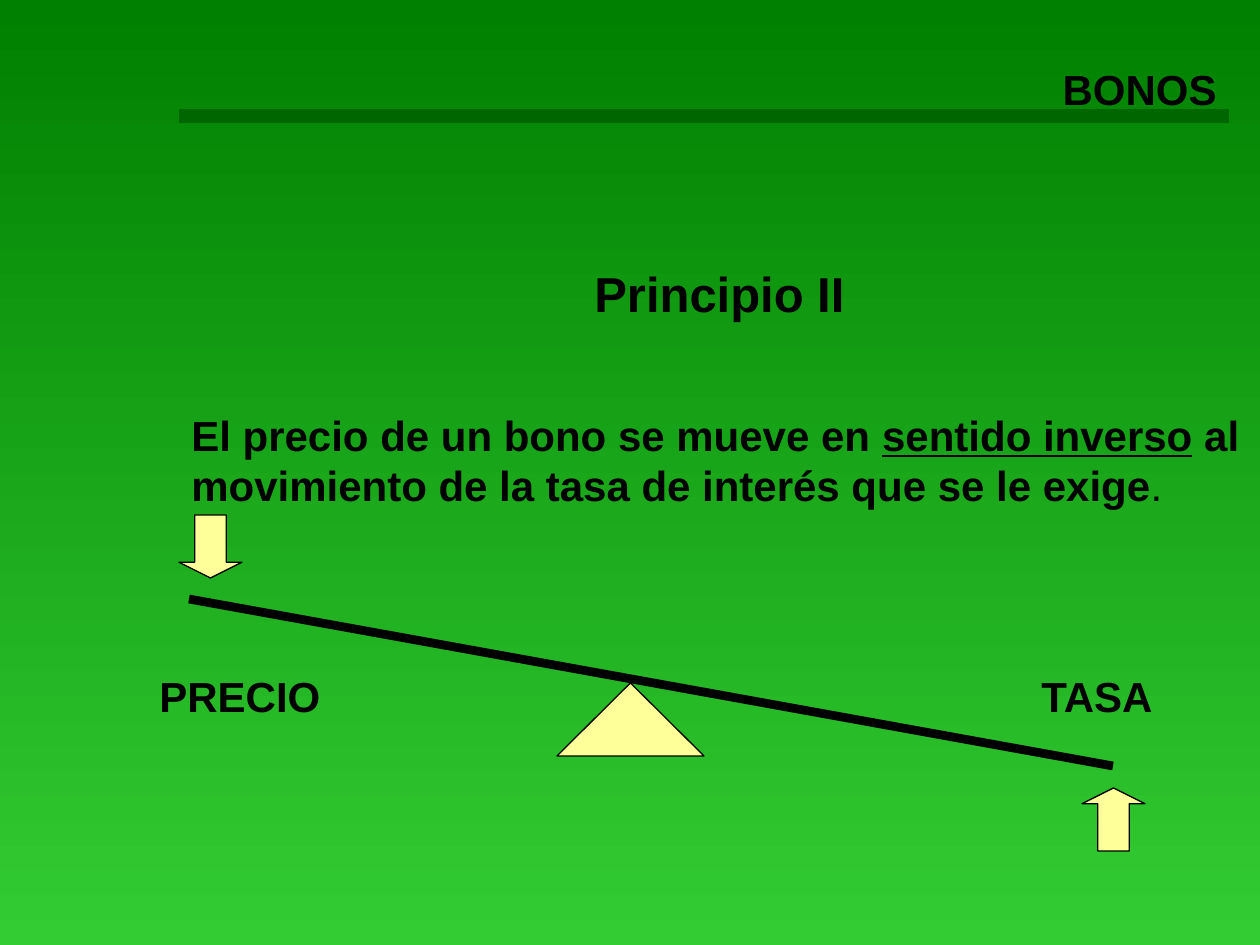
import pptx
import pptx.dml.color
import pptx.enum.shapes
import pptx.enum.text
import pptx.oxml.ns
import pptx.util
from lxml import etree

EMU_PER_PX = 914400 / 126
COLORS = {
    "sky": "008000",
    "ground": "33CC33",
    "rule": "006600",
    "ink": "000000",
    "cream": "FFFF99",
}
SHAPES = pptx.enum.shapes.MSO_SHAPE
ALIGN = pptx.enum.text.PP_ALIGN


def px(*lengths):
    return [pptx.util.Emu(round(length * EMU_PER_PX)) for length in lengths]


def rgb(name):
    return pptx.dml.color.RGBColor.from_string(COLORS[name])


def paint_background(slide):
    fill = slide.background.fill
    fill.gradient()
    fill.gradient_angle = 270
    for stop, name in zip(fill.gradient_stops, ("sky", "ground")):
        stop.color.rgb = rgb(name)


def add_line(slide, start, end, color, width):
    line = slide.shapes.add_connector(
        pptx.enum.shapes.MSO_CONNECTOR.STRAIGHT, *px(*start, *end))
    line.line.color.rgb = rgb(color)
    line.line.width = pptx.util.Pt(width)
    etree.SubElement(line._element.spPr, pptx.oxml.ns.qn("a:effectLst"))


def add_figure(slide, preset, *box):
    figure = slide.shapes.add_shape(preset, *px(*box))
    figure.shadow.inherit = False
    figure.fill.solid()
    figure.fill.fore_color.rgb = rgb("cream")
    figure.line.color.rgb = rgb("ink")
    figure.line.width = pptx.util.Pt(0.75)
    return figure


def add_frame(slide, *box):
    frame = slide.shapes.add_textbox(*px(*box)).text_frame
    frame.word_wrap = True
    return frame


def add_run(paragraph, text, size=24, bold=True, underline=False):
    run = paragraph.add_run()
    run.text = text
    font = run.font
    font.name = "Arial"
    font.size = pptx.util.Pt(size)
    font.bold = bold
    font.underline = underline
    font.color.rgb = rgb("ink")


def add_label(slide, text, *box, align=ALIGN.LEFT):
    paragraph = add_frame(slide, *box).paragraphs[0]
    paragraph.alignment = align
    add_run(paragraph, text)


def add_principle(slide):
    frame = add_frame(slide, 179, 257, 1081, 260)
    heading = frame.paragraphs[0]
    heading.alignment = ALIGN.CENTER
    heading.space_after = pptx.util.Pt(50)
    add_run(heading, "Principio II", size=28)

    statement = frame.add_paragraph()
    add_run(statement, "El precio de un bono se mueve en ")
    add_run(statement, "sentido inverso", underline=True)
    add_run(statement, " al movimiento de la tasa de interés que se le exige")
    add_run(statement, ".", bold=False)


def add_seesaw(slide):
    add_label(slide, "PRECIO", 147, 664, 230, 60)
    add_label(slide, "TASA", 1029, 664, 180, 60)
    add_line(slide, (189, 599), (1113, 766), "ink", 5)
    for preset, left, top in ((SHAPES.DOWN_ARROW, 179, 515),
                              (SHAPES.UP_ARROW, 1082, 788)):
        arrow = add_figure(slide, preset, left, top, 63, 63)
        arrow.adjustments[0] = 0.5
        arrow.adjustments[1] = 0.25
    add_figure(slide, SHAPES.FLOWCHART_EXTRACT, 557, 683, 147, 73)


def main():
    deck = pptx.Presentation()
    deck.slide_width, deck.slide_height = px(1260, 945)
    slide = deck.slides.add_slide(deck.slide_layouts[6])
    paint_background(slide)
    add_line(slide, (179, 116), (1229, 116), "rule", 8)
    add_label(slide, "BONOS", 32, 57, 1197, 60, align=ALIGN.RIGHT)
    add_principle(slide)
    add_seesaw(slide)
    deck.save("out.pptx")


if __name__ == "__main__":
    main()
